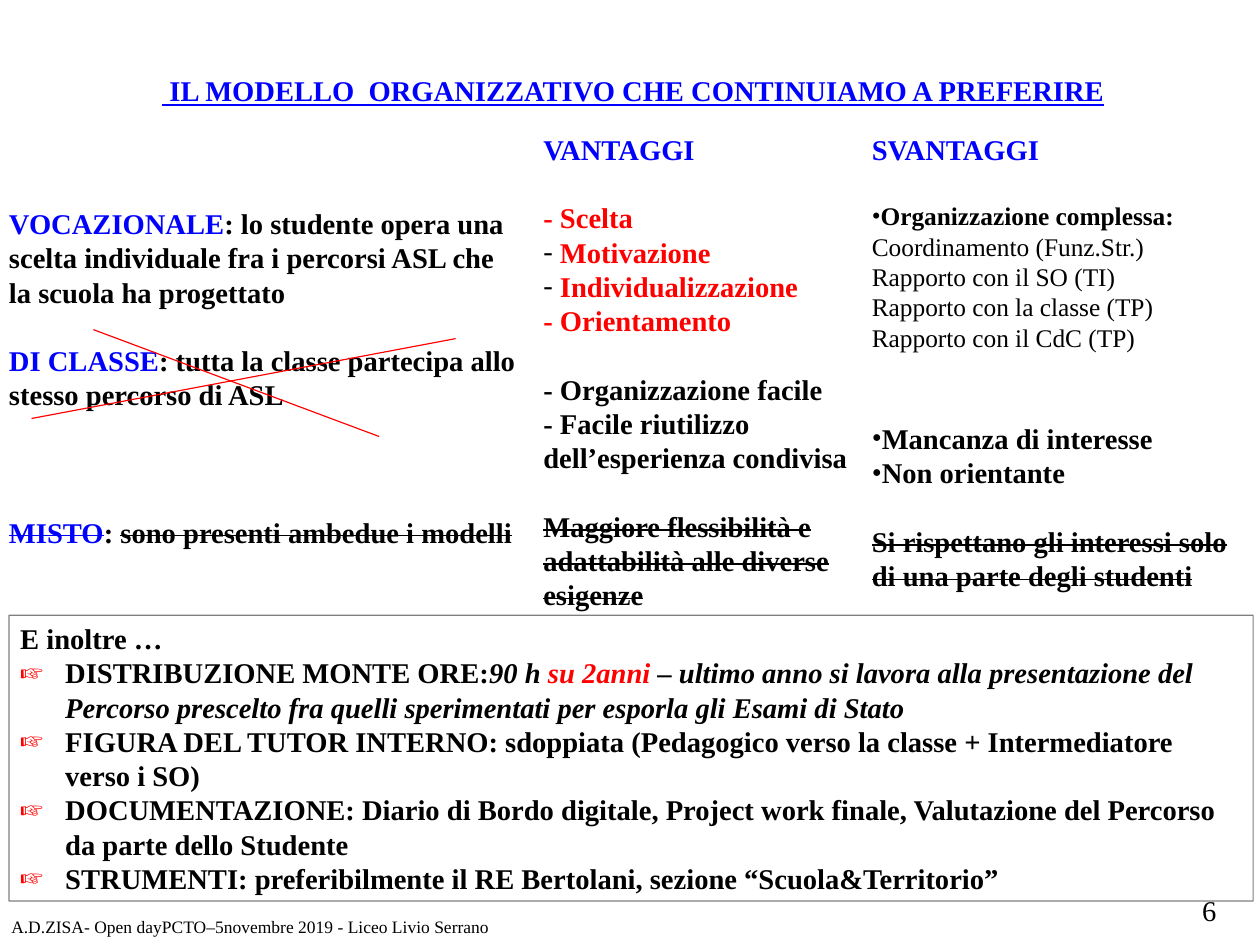
from dataclasses import dataclass, field

from lxml import etree
from pptx import Presentation
from pptx import util as u
from pptx.dml.color import RGBColor
from pptx.enum import shapes, text
from pptx.oxml.ns import qn

PX = 9000  # 40 px to the centimetre
FONT = "Times New Roman"
LINE = 1.2  # line height relative to the font size
BLACK, BLUE, RED = "000000", "0000FF", "FF0000"


@dataclass
class Run:
    text: str
    color: str = BLACK
    bold: bool = True
    italic: bool = False
    underline: bool = False
    strike: bool = False


@dataclass
class Para:
    runs: list[Run]
    size: int = 18
    gap: int = 0  # free lines above
    bullet: str = ""
    bullet_color: str = BLACK
    indent: int = 0
    align: text.PP_ALIGN = text.PP_ALIGN.LEFT


@dataclass
class Block:
    box: tuple[int, int, int, int]
    paras: list[Para] = field(default_factory=list)


def rgb(color: str) -> RGBColor:
    return RGBColor.from_string(color)


def px(*lengths: int) -> list[int]:
    return [u.Emu(n * PX) for n in lengths]


def add_bullet(p, para: Para) -> None:
    pPr = p._p.get_or_add_pPr()
    pPr.set("marL", str(para.indent * PX))
    pPr.set("indent", str(-para.indent * PX))
    clr = etree.SubElement(pPr, qn("a:buClr"))
    etree.SubElement(clr, qn("a:srgbClr")).set("val", para.bullet_color)
    etree.SubElement(pPr, qn("a:buFont")).set("typeface", FONT)
    etree.SubElement(pPr, qn("a:buChar")).set("char", para.bullet)


def write(sp, paras: list[Para]) -> None:
    tf = sp.text_frame
    frame = dict(word_wrap=True, auto_size=text.MSO_AUTO_SIZE.NONE,
                 vertical_anchor=text.MSO_ANCHOR.TOP,
                 margin_left=10 * PX, margin_right=10 * PX,
                 margin_top=5 * PX, margin_bottom=5 * PX)
    for name, value in frame.items():
        setattr(tf, name, value)
    for i, para in enumerate(paras):
        p = tf.add_paragraph() if i else tf.paragraphs[0]
        spacing = dict(alignment=para.align,
                       line_spacing=u.Pt(para.size * LINE),
                       space_before=u.Pt(para.gap * 18 * LINE),
                       space_after=u.Pt(0))
        for name, value in spacing.items():
            setattr(p, name, value)
        if para.bullet:
            add_bullet(p, para)
        for run in para.runs:
            r = p.add_run()
            r.text = run.text
            style = dict(name=FONT, size=u.Pt(para.size), bold=run.bold,
                         italic=run.italic, underline=run.underline)
            for name, value in style.items():
                setattr(r.font, name, value)
            r.font.color.rgb = rgb(run.color)
            if run.strike:
                r._r.get_or_add_rPr().set("strike", "sngStrike")


def add_stroke(slide, ends: tuple[int, int, int, int]) -> None:
    sp = slide.shapes.add_connector(shapes.MSO_CONNECTOR.STRAIGHT, *px(*ends))
    sp.line.color.rgb = rgb(RED)
    sp.line.width = u.Pt(0.75)
    etree.SubElement(sp._element.spPr, qn("a:effectLst"))


def line(content: str, color: str = BLACK, **options) -> Para:
    return Para([Run(content, color)], **options)


def plain(content: str, size: int, **options) -> Para:
    return Para([Run(content, bold=False)], size, **options)


def struck(content: str) -> Para:
    return Para([Run(content, strike=True)], gap=1)


def hand(*runs: Run) -> Para:
    return Para(list(runs), bullet="☞", bullet_color=RED, indent=40)


TITLE = Block((69, 60, 988, 41), [Para(
    [Run(" IL MODELLO  ORGANIZZATIVO CHE CONTINUIAMO A PREFERIRE", BLUE, underline=True)],
    align=text.PP_ALIGN.CENTER)])

PAGE_NUMBER = Block((1030, 789, 90, 51), [plain("6", 18, align=text.PP_ALIGN.CENTER)])

FOOTER = Block((0, 809, 983, 31), [
    plain("A.D.ZISA- Open dayPCTO–5novembre 2019 - Liceo Livio Serrano", 11)])

MODELS = Block((-2, 178, 477, 353), [
    Para([Run("VOCAZIONALE", BLUE),
          Run(": lo studente opera una scelta individuale fra i percorsi ASL che "
              "la scuola ha progettato")]),
    Para([Run("DI CLASSE", BLUE),
          Run(": tutta la classe partecipa allo stesso percorso di ASL")], gap=1),
    Para([Run("MISTO", BLUE, strike=True), Run(": "),
          Run("sono presenti ambedue i modelli", strike=True)], gap=3),
])

ADVANTAGES = Block((473, 112, 292, 437), [
    line("VANTAGGI", BLUE),
    line("- Scelta", RED, gap=1),
    line(" Motivazione", RED, bullet="-"),
    line(" Individualizzazione", RED, bullet="-"),
    line("- Orientamento", RED),
    line("- Organizzazione facile", gap=1),
    line("- Facile riutilizzo dell’esperienza condivisa"),
    struck("Maggiore flessibilità e adattabilità alle diverse esigenze"),
])

DRAWBACKS = Block((765, 112, 348, 427), [
    line("SVANTAGGI", BLUE),
    line("Organizzazione complessa:", size=16, gap=1, bullet="•"),
    *(plain(item, 16) for item in (
        "Coordinamento (Funz.Str.)", "Rapporto con il SO (TI)",
        "Rapporto con la classe (TP)", "Rapporto con il CdC (TP)")),
    line("Mancanza di interesse", gap=2, bullet="•"),
    line("Non orientante", bullet="•"),
    struck("Si rispettano gli interessi solo di una parte degli studenti"),
])

EXTRAS = Block((8, 547, 1106, 254), [
    line("E inoltre …"),
    hand(Run("DISTRIBUZIONE MONTE ORE:"), Run("90 h ", italic=True),
         Run("su 2anni ", RED, italic=True),
         Run("– ultimo anno si lavora alla presentazione del Percorso prescelto fra "
             "quelli sperimentati per esporla gli Esami di Stato", italic=True)),
    hand(Run("FIGURA DEL TUTOR INTERNO: sdoppiata (Pedagogico verso la classe + "
             "Intermediatore verso i SO)")),
    hand(Run("DOCUMENTAZIONE: Diario di Bordo digitale, Project work finale, "
             "Valutazione del Percorso da parte dello Studente")),
    hand(Run("STRUMENTI: preferibilmente il RE Bertolani, sezione “Scuola&Territorio”")),
])

CROSS = [(28, 372, 405, 301), (83, 293, 337, 388)]


def main() -> None:
    prs = Presentation()
    prs.slide_width, prs.slide_height = px(1120, 840)
    slide = prs.slides.add_slide(prs.slide_layouts[5])

    # Title
    title = slide.shapes.title
    title.left, title.top, title.width, title.height = px(*TITLE.box)
    write(title, TITLE.paras)

    # Page number, footer and the three columns
    for block in (PAGE_NUMBER, FOOTER, MODELS, ADVANTAGES, DRAWBACKS):
        write(slide.shapes.add_textbox(*px(*block.box)), block.paras)

    # Framed box with a half-transparent border
    sp = slide.shapes.add_shape(shapes.MSO_SHAPE.RECTANGLE, *px(*EXTRAS.box))
    sp.shadow.inherit = False
    sp.fill.background()
    sp.line.color.rgb = rgb(BLACK)
    sp.line.width = u.Pt(0.75)
    border = sp._element.spPr.find(qn("a:ln")).find(".//" + qn("a:srgbClr"))
    etree.SubElement(border, qn("a:alpha")).set("val", "50000")
    write(sp, EXTRAS.paras)

    # Cross over the class model
    for ends in CROSS:
        add_stroke(slide, ends)

    prs.save("out.pptx")


if __name__ == "__main__":
    main()
